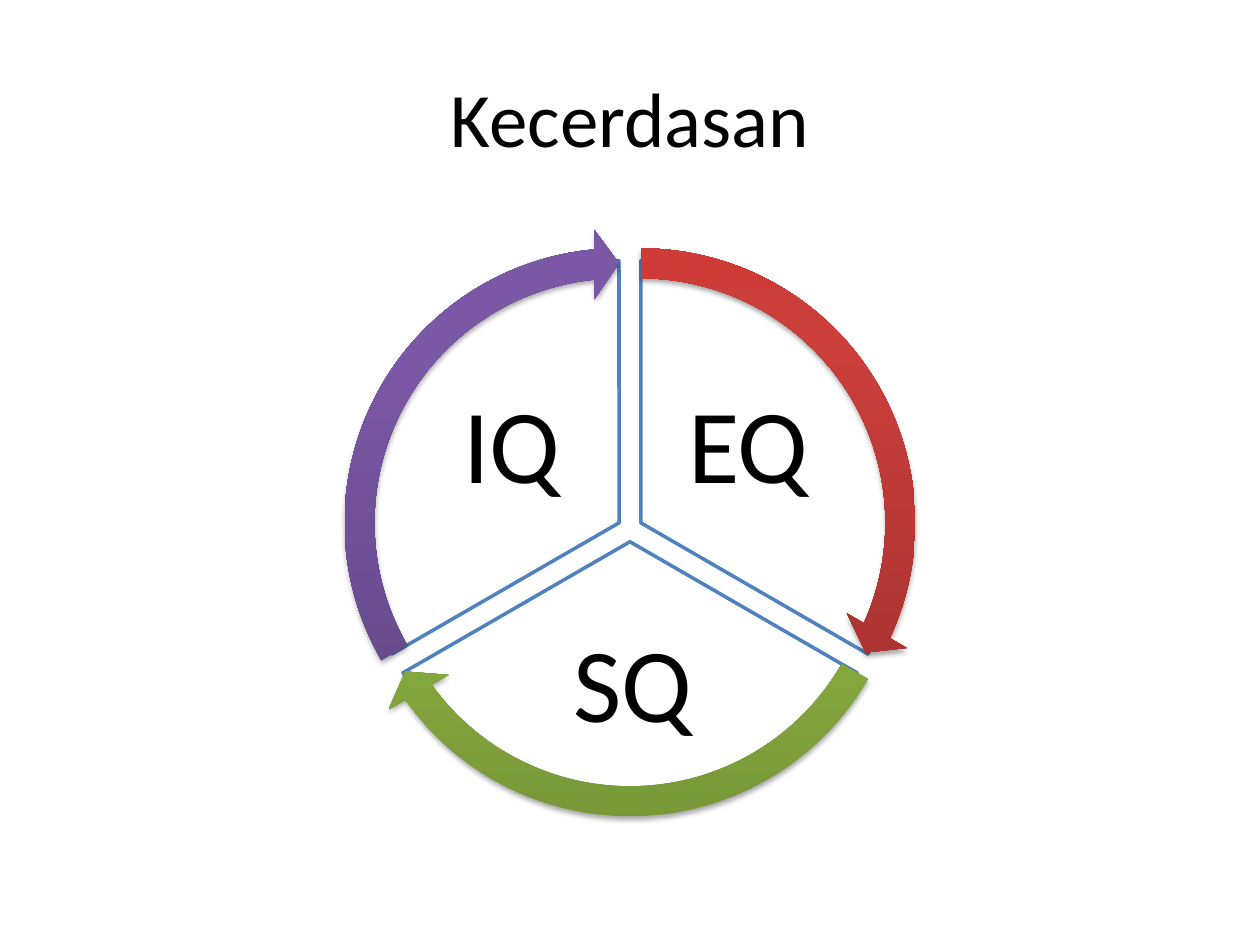
from math import cos, radians, sin

from lxml.etree import fromstring
from pptx import Presentation
from pptx.dml.color import RGBColor
from pptx.enum.shapes import MSO_SHAPE as Preset
from pptx.enum.text import MSO_ANCHOR as Anchor, PP_ALIGN as Align
from pptx.oxml.ns import nsdecls
from pptx.util import Inches, Pt

COLORS = {"ink": "000000", "paper": "FFFFFF", "outline": "4F81BD"}
GRADIENTS = {
    "EQ": ("9C2F2D", "CB3E3A", "CE3B37"),
    "SQ": ("779737", "9BC348", "9DC746"),
    "IQ": ("5F4480", "7B58A6", "7C57A8"),
}
SECTORS = {"EQ": (270, 30), "SQ": (30, 150), "IQ": (150, 270)}
LABELS = {
    "EQ": (5.2, 2.95, 1.48, 1.24),
    "SQ": (3.91, 4.92, 2.23, 1.09),
    "IQ": (3.32, 2.95, 1.48, 1.24),
}
HUB = (5, 4.2)
GAP = 0.1
PIE_SIZE, RING_SIZE = 4.16, 4.67
BAND, HEAD, POINT = 5.1, 5.9, 5.46
ANGLE_UNIT = 0.6


class CycleSlide:
    def __init__(self, deck):
        self.slide = deck.slides.add_slide(deck.slide_layouts[5])
        self.font = {"name": "Calibri"}

    def color(self, name):
        return RGBColor.from_string(COLORS[name])

    def set_words(self, frame, words, size, **spacing):
        frame.text = words
        frame.word_wrap = True
        frame.vertical_anchor = Anchor.MIDDLE
        paragraph = frame.paragraphs[0]
        for key, value in {"alignment": Align.CENTER, **spacing}.items():
            setattr(paragraph, key, value)
        font = paragraph.runs[0].font
        for key, value in {**self.font, "size": Pt(size)}.items():
            setattr(font, key, value)
        font.color.rgb = self.color("ink")

    def title(self, words, box):
        heading = self.slide.shapes.title
        for side, length in zip(("left", "top", "width", "height"), box):
            setattr(heading, side, Inches(length))
        self.set_words(heading.text_frame, words, 44)

    def label(self, words, box):
        frame = self.slide.shapes.add_textbox(*map(Inches, box)).text_frame
        for side in ("margin_left", "margin_top", "margin_right", "margin_bottom"):
            setattr(frame, side, Inches(0.08))
        self.set_words(frame, words, 60, line_spacing=0.9, space_after=Pt(21))

    def round_shape(self, preset, size, sector, adjustments):
        start, end = sector
        middle = radians(start + (end - start) % 360 / 2)
        left = HUB[0] + GAP * cos(middle) - size / 2
        top = HUB[1] + GAP * sin(middle) - size / 2
        shape = self.slide.shapes.add_shape(
            preset, *map(Inches, (left, top, size, size)))
        for index, value in enumerate(adjustments):
            shape.adjustments[index] = value
        shape.shadow.inherit = False
        return shape

    def pie(self, sector):
        piece = self.round_shape(
            Preset.PIE, PIE_SIZE, sector, [a * ANGLE_UNIT for a in sector])
        piece.fill.solid()
        piece.fill.fore_color.rgb = self.color("paper")
        piece.line.color.rgb = self.color("outline")
        piece.line.width = Pt(2)

    def arrow(self, sector, gradient):
        start, end = sector
        angles = [a * ANGLE_UNIT for a in (POINT, end - POINT, start)]
        arc = self.round_shape(Preset.CIRCULAR_ARROW, RING_SIZE, sector,
                               [BAND / 100, *angles, HEAD / 100])
        arc.line.fill.background()
        stops = "".join(
            f'<a:gs pos="{share * 1000}"><a:srgbClr val="{shade}"/></a:gs>'
            for share, shade in zip((0, 80, 100), gradient))
        properties = arc.element.spPr
        properties.find("{*}prstGeom").addnext(fromstring(
            f'<a:gradFill {nsdecls("a")} rotWithShape="1"><a:gsLst>{stops}</a:gsLst>'
            '<a:lin ang="16200000" scaled="0"/></a:gradFill>'))
        properties.find("{*}effectLst").append(fromstring(
            f'<a:outerShdw {nsdecls("a")} blurRad="{Pt(3.1)}" dist="{Pt(1.8)}" '
            f'dir="5400000" rotWithShape="0"><a:srgbClr val="{COLORS["ink"]}">'
            '<a:alpha val="35000"/></a:srgbClr></a:outerShdw>'))


def main():
    deck = Presentation()
    deck.slide_width, deck.slide_height = Inches(10), Inches(7.5)
    cycle = CycleSlide(deck)
    cycle.title("Kecerdasan", (0.5, 0.3, 9, 1.25))
    for name, sector in SECTORS.items():
        cycle.pie(sector)
        cycle.label(name, LABELS[name])
    for name, sector in SECTORS.items():
        cycle.arrow(sector, GRADIENTS[name])
    deck.save("out.pptx")


if __name__ == "__main__":
    main()
